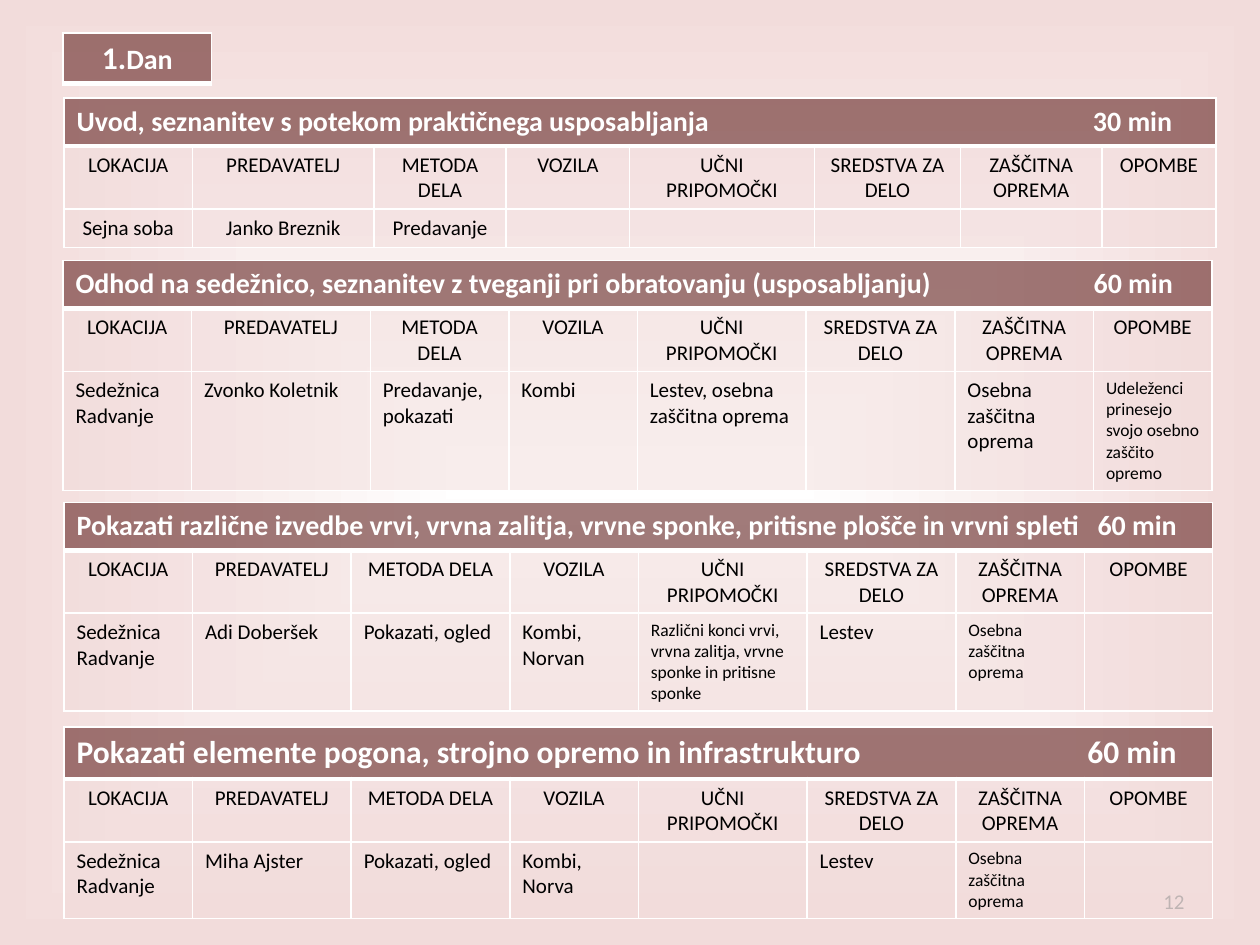
from dataclasses import dataclass
from typing import Any

from lxml.etree import SubElement
from pptx import Presentation
from pptx.dml.color import RGBColor
from pptx.enum.text import MSO_ANCHOR, PP_ALIGN
from pptx.oxml import parse_xml
from pptx.oxml.ns import nsdecls, qn
from pptx.util import Pt

WHITE = RGBColor(0xFF, 0xFF, 0xFF)
BLACK = RGBColor(0x00, 0x00, 0x00)
GREY = RGBColor(0x8C, 0x8C, 0x8C)
MAROON = RGBColor(0x63, 0x25, 0x23)
PINK = RGBColor(0xF2, 0xDC, 0xDB)

FONT = "Calibri"
HEADINGS = ("LOKACIJA", "PREDAVATELJ", "METODA DELA", "VOZILA", "UČNI PRIPOMOČKI",
            "SREDSTVA ZA DELO", "ZAŠČITNA OPREMA", "OPOMBE")
BODY = {"name": FONT, "size": Pt(12), "bold": False}
SMALL = {**BODY, "size": Pt(10)}
BANNER = {"name": FONT, "size": Pt(16), "bold": True}
LARGE_BANNER = {**BANNER, "size": Pt(18)}
EQUIPMENT_COLS = (73.4, 90.7, 90.7, 73.4, 96.5, 85, 73.4, 73.4)


@dataclass
class Session:
    title: str
    duration: str
    left: float
    top: float
    cols: tuple[float, ...]
    rows: tuple[float, ...]
    entries: tuple[str, ...]
    tab: float
    small: tuple[int, ...] = ()
    entry_align: PP_ALIGN = PP_ALIGN.LEFT
    banner: Any = None


FIRST_SESSIONS = (
    Session("Uvod, seznanitev s potekom praktičnega usposabljanja", "30 min",
            36.6, 56.1, (73.4, 103.7, 75.6, 70.6, 105.5, 83.7, 80.6, 65.3),
            (27.4, 36, 21.8),
            ("Sejna soba", "Janko Breznik", "Predavanje", "", "", "", "", ""),
            626, entry_align=PP_ALIGN.CENTER),
    Session("Odhod na sedežnico, seznanitev z tveganji pri obratovanju (usposabljanju)",
            "60 min", 36, 148.9, (73.4, 102.2, 79.2, 73.4, 96.5, 85, 79.2, 67.7),
            (27.4, 36, 68),
            ("Sedežnica Radvanje", "Zvonko Koletnik", "Predavanje,\npokazati", "Kombi",
             "Lestev, osebna zaščitna oprema", "", "Osebna zaščitna oprema",
             "Udeleženci prinesejo svojo osebno zaščito opremo"),
            627, (7,)),
    Session("Pokazati različne izvedbe vrvi, vrvna zalitja, vrvne sponke, "
            "pritisne plošče in vrvni spleti", "60 min",
            36.6, 287, EQUIPMENT_COLS, (27.4, 36, 56),
            ("Sedežnica Radvanje", "Adi Doberšek", "Pokazati, ogled", "Kombi, Norvan",
             "Različni konci vrvi, vrvna zalitja, vrvne sponke in pritisne sponke",
             "Lestev", "Osebna zaščitna oprema", ""),
            628.6, (4, 6)),
)
LAST_SESSION = Session(
    "Pokazati elemente pogona, strojno opremo in infrastrukturo", "60 min",
    36.6, 415.4, EQUIPMENT_COLS, (29.7, 36, 43.8),
    ("Sedežnica Radvanje", "Miha Ajster", "Pokazati, ogled", "Kombi, Norva",
     "", "Lestev", "Osebna zaščitna oprema", ""),
    628.6, (6,), banner=LARGE_BANNER)


def add_run(p: Any, text: str, fmt: dict, color: RGBColor) -> None:
    r = p.add_run()
    r.text = text
    for name, value in fmt.items():
        setattr(r.font, name, value)
    r.font.color.rgb = color


def style_cell(cell: Any, color: RGBColor, opacity: int, bottom: float = 1) -> None:
    cell.fill.solid()
    cell.fill.fore_color.rgb = color
    tc_pr = cell._tc.get_or_add_tcPr()
    SubElement(tc_pr.find(".//" + qn("a:srgbClr")), qn("a:alpha"), val=str(opacity * 1000))
    widths = {"lnL": 1, "lnR": 1, "lnT": 1, "lnB": bottom}
    for i, (side, width) in enumerate(widths.items()):
        tc_pr.insert(i, parse_xml(
            f'<a:{side} {nsdecls("a")} w="{Pt(width)}"><a:solidFill>'
            f'<a:srgbClr val="{WHITE}"/></a:solidFill></a:{side}>'))


def write_cell(cell: Any, text: str, fmt: dict, align: PP_ALIGN) -> None:
    tf = cell.text_frame
    for i, line in enumerate(text.split("\n")):
        p = tf.add_paragraph() if i else tf.paragraphs[0]
        p.alignment = align
        if line:
            add_run(p, line, fmt, BLACK)
        else:
            SubElement(p._p, qn("a:endParaRPr"), sz=str(int(fmt["size"].pt * 100)))


def add_grid(s: Any, left: float, top: float, cols: tuple, rows: tuple) -> Any:
    tbl = s.shapes.add_table(len(rows), len(cols), Pt(left), Pt(top),
                             Pt(sum(cols)), Pt(sum(rows))).table
    tbl.horz_banding = False
    for col, width in zip(tbl.columns, cols):
        col.width = Pt(width)
    for row, height in zip(tbl.rows, rows):
        row.height = Pt(height)
    return tbl


def add_session(s: Any, session: Session) -> None:
    tbl = add_grid(s, session.left, session.top, session.cols, session.rows)
    last = len(HEADINGS) - 1
    tbl.cell(0, 0).merge(tbl.cell(0, last))
    for i, (heading, entry) in enumerate(zip(HEADINGS, session.entries)):
        style_cell(tbl.cell(0, i), MAROON, 60, 3)
        style_cell(tbl.cell(1, i), PINK, 50)
        style_cell(tbl.cell(2, i), PINK, 50)
        write_cell(tbl.cell(1, i), heading, BODY, PP_ALIGN.CENTER)
        write_cell(tbl.cell(2, i), entry, SMALL if i in session.small else BODY,
                   session.entry_align)
    p = tbl.cell(0, 0).text_frame.paragraphs[0]
    tabs = SubElement(p._p.get_or_add_pPr(), qn("a:tabLst"))
    SubElement(tabs, qn("a:tab"), pos=str(Pt(session.tab)), algn="r")
    add_run(p, f"{session.title}\t{session.duration}", session.banner or BANNER, WHITE)


def add_day(s: Any) -> None:
    cell = add_grid(s, 36, 18.9, (85,), (28.4,)).cell(0, 0)
    style_cell(cell, MAROON, 60, 3)
    p = cell.text_frame.paragraphs[0]
    p.alignment = PP_ALIGN.CENTER
    add_run(p, "1.", LARGE_BANNER, WHITE)
    add_run(p, "Dan", BANNER, WHITE)


def add_slide_number(s: Any) -> None:
    tf = s.shapes.add_textbox(Pt(516), Pt(500.5), Pt(168), Pt(28.8)).text_frame
    tf.word_wrap = True
    tf.vertical_anchor = MSO_ANCHOR.MIDDLE
    p = tf.paragraphs[0]
    p.alignment = PP_ALIGN.RIGHT
    add_run(p, "12", BODY, GREY)


def set_background(s: Any) -> None:
    s.background.fill.gradient()
    grad = s.background._cSld.find(".//" + qn("a:gradFill"))
    grad.getparent().replace(grad, parse_xml(
        f'<a:gradFill {nsdecls("a")} rotWithShape="1"><a:gsLst>'
        f'<a:gs pos="0"><a:srgbClr val="{WHITE}"/></a:gs>'
        f'<a:gs pos="100000"><a:srgbClr val="{PINK}"/></a:gs></a:gsLst>'
        '<a:path path="shape"><a:fillToRect l="50000" t="50000" r="50000" b="50000"/>'
        '</a:path></a:gradFill>'))


def main() -> None:
    prs = Presentation()
    prs.slide_width, prs.slide_height = Pt(720), Pt(540)
    s = prs.slides.add_slide(prs.slide_layouts[6])
    set_background(s)
    add_slide_number(s)
    for session in FIRST_SESSIONS:
        add_session(s, session)
    add_day(s)
    add_session(s, LAST_SESSION)
    prs.save("out.pptx")


if __name__ == "__main__":
    main()
